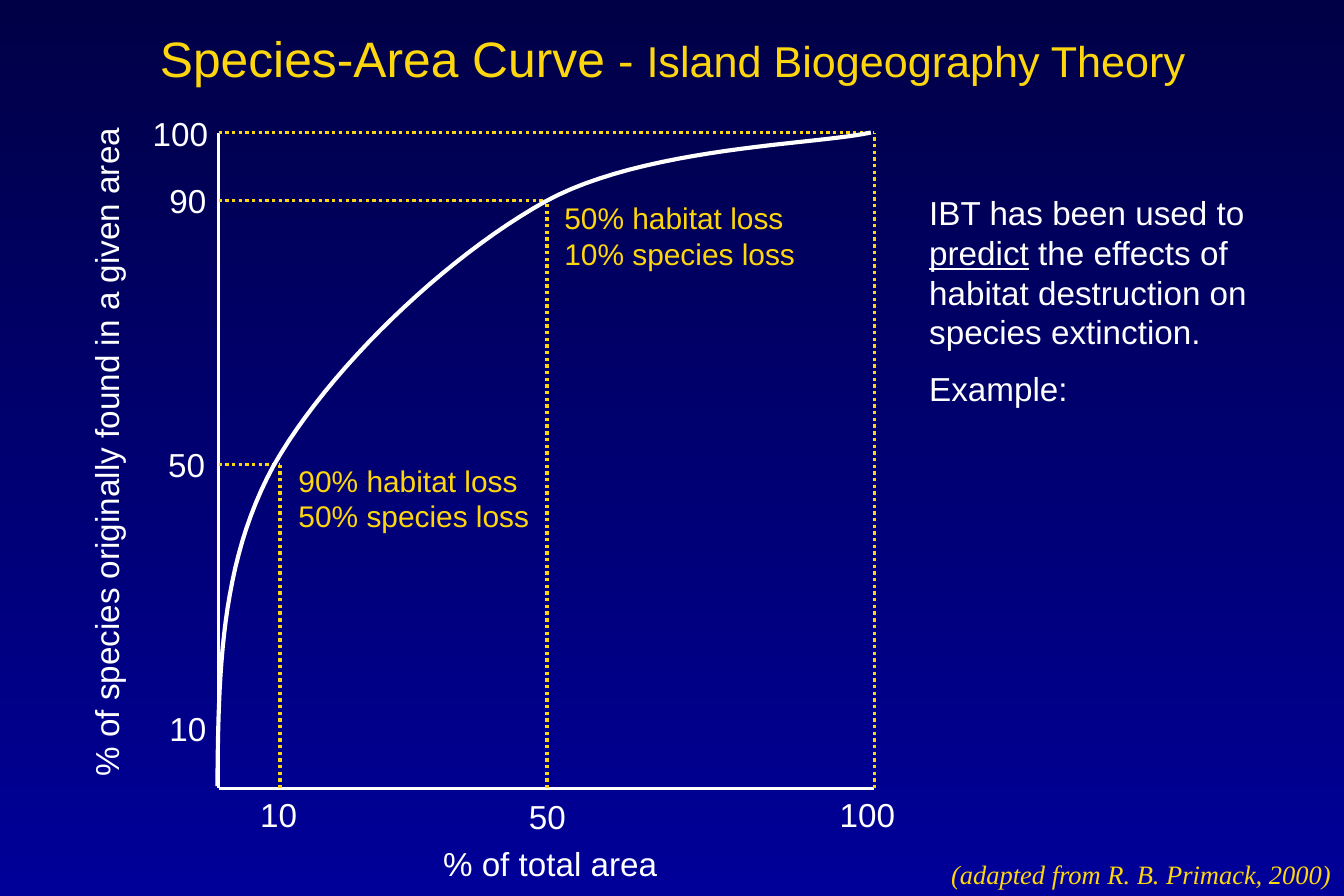
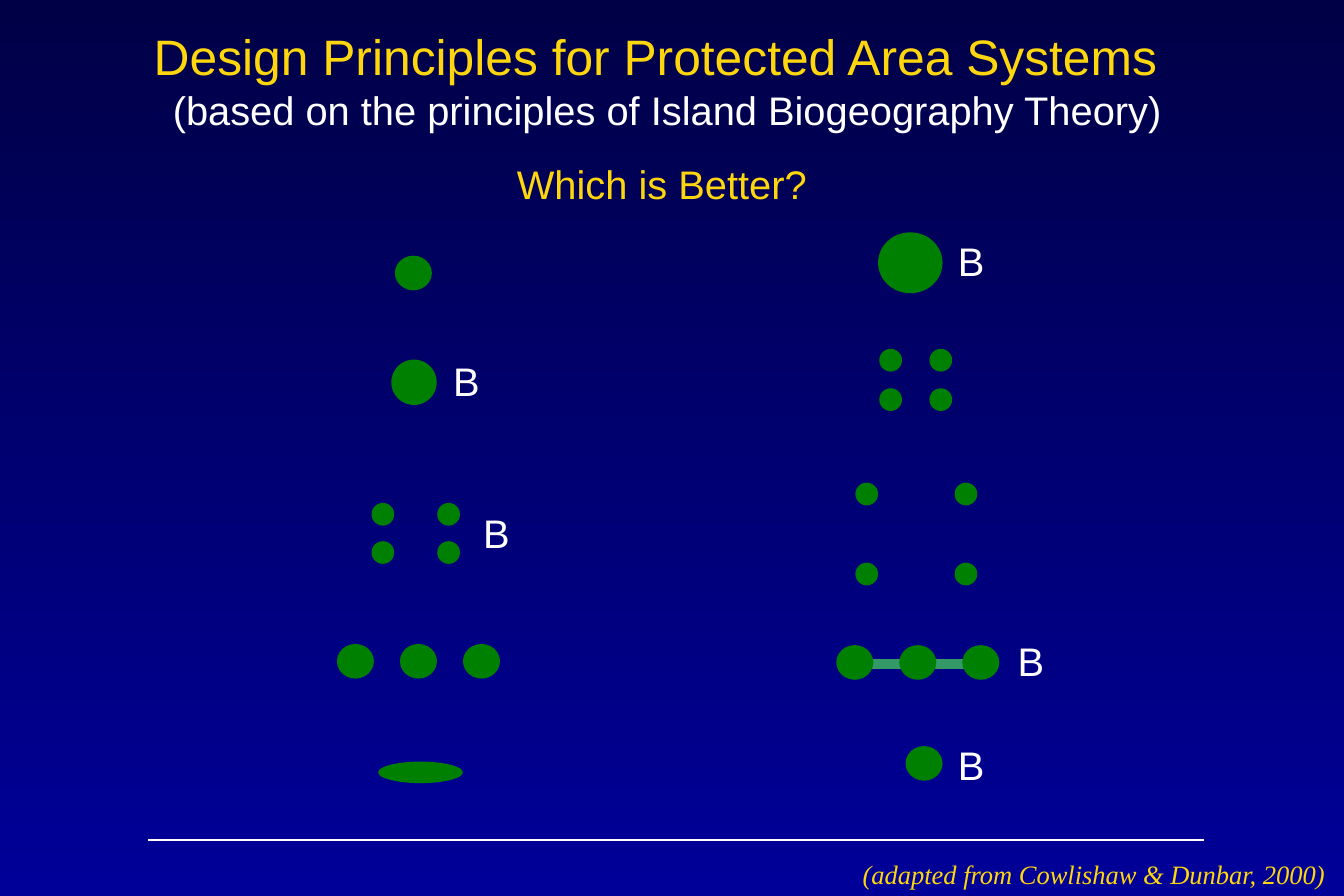
from dataclasses import dataclass
from itertools import product

from lxml import etree
from pptx import Presentation
from pptx import util as u
from pptx.dml.color import RGBColor
from pptx.enum import dml, shapes, text
from pptx.oxml.ns import qn


@dataclass(frozen=True)
class Theme:
    # Colours
    sky_top: str = "000047"
    sky_bottom: str = "000099"
    white: str = "FFFFFF"
    gold: str = "FED60E"
    island: str = "008000"
    corridor: str = "339966"
    # Fonts and type sizes
    sans: str = "Arial"
    serif: str = "Times New Roman"
    title: int = 30
    dash: int = 28
    topic: int = 26
    heading: int = 24
    body: int = 20
    note: int = 18
    source: int = 16


THEME = Theme()
COLUMNS = 45
CENTER, RIGHT = text.PP_ALIGN.CENTER, text.PP_ALIGN.RIGHT


class Deck:
    """Holds the style and the current slide; lengths are grid columns and rows."""

    def __init__(self, theme):
        self.theme = theme
        self.prs = Presentation()
        self.prs.slide_width, self.prs.slide_height = u.Inches(11.25), u.Inches(7.5)
        self.cell = self.prs.slide_width / COLUMNS
        self.slide = None
        # Shared background, dark at the top
        fill = self.prs.slide_master.background.fill
        fill.gradient()
        fill.gradient_angle = 270
        for stop, colour in zip(fill.gradient_stops, (theme.sky_top, theme.sky_bottom)):
            stop.color.rgb = RGBColor.from_string(colour)

    def grid(self, *lengths):
        return [u.Emu(round(length * self.cell)) for length in lengths]

    def new_slide(self):
        self.slide = self.prs.slides.add_slide(self.prs.slide_layouts[6])

    def style(self, run, size, colour, font=None, italic=None, underline=None):
        run.font.name = font or self.theme.sans
        run.font.size = u.Pt(size)
        run.font.color.rgb = RGBColor.from_string(colour)
        run.font.italic, run.font.underline = italic, underline

    def text(self, box, words, size, colour, align=None, turn=0, **look):
        label = self.slide.shapes.add_textbox(*self.grid(*box))
        label.rotation = turn
        frame = label.text_frame
        frame.word_wrap = True
        frame.text = words
        for paragraph in frame.paragraphs:
            paragraph.alignment = align
            for run in paragraph.runs:
                self.style(run, size, colour, **look)
        return frame

    def extend(self, paragraph, words, size, colour, **look):
        run = paragraph.add_run()
        run.text = words
        self.style(run, size, colour, **look)

    def indent(self, paragraph, length):
        paragraph._p.get_or_add_pPr().set("marL", str(self.grid(length)[0]))

    def title(self, box, words, align=None):
        return self.text(box, words, self.theme.title, self.theme.gold, align)

    def source(self, words, right):
        width = 16.5
        self.text((right - width, 28.52, width, 1.48), words, self.theme.source,
                  self.theme.gold, RIGHT, font=self.theme.serif, italic=True)

    def line(self, start, end, colour, width=2.0, dotted=False):
        rule = self.slide.shapes.add_connector(
            shapes.MSO_CONNECTOR.STRAIGHT, *self.grid(*start, *end))
        rule.line.color.rgb = RGBColor.from_string(colour)
        rule.line.width = u.Pt(width)
        if dotted:
            rule.line.dash_style = dml.MSO_LINE.ROUND_DOT
        etree.SubElement(rule._element.spPr, qn("a:effectLst"))

    def curve(self, start, bends, colour, width, steps=24):
        """Draws joined cubic bends, each given as two handles and an end."""
        points, here = [], start
        for first, second, end in bends:
            for step in range(1, steps + 1):
                t = step / steps
                weights = (1 - t) ** 3, 3 * t * (1 - t) ** 2, 3 * t * t * (1 - t), t ** 3
                knots = here, first, second, end
                points.append(self.grid(*(sum(w * knot[axis] for w, knot in zip(weights, knots))
                                          for axis in (0, 1))))
            here = end
        builder = self.slide.shapes.build_freeform(*self.grid(*start))
        builder.add_line_segments(points, close=False)
        outline = builder.convert_to_shape()
        outline.shadow.inherit = False
        outline.fill.background()
        outline.line.color.rgb = RGBColor.from_string(colour)
        outline.line.width = u.Pt(width)

    def islands(self, centres, size):
        """Draws one island per centre, grouped when there are several."""
        centres = list(centres)
        home = self.slide.shapes
        if len(centres) > 1:
            home = home.add_group_shape().shapes
        width, height = size
        for x, y in centres:
            island = home.add_shape(shapes.MSO_SHAPE.OVAL, *self.grid(
                x - width / 2, y - height / 2, width, height))
            island.shadow.inherit = False
            island.fill.solid()
            island.fill.fore_color.rgb = RGBColor.from_string(self.theme.island)
            island.line.fill.background()


def species_area_curve(deck):
    style = deck.theme
    deck.new_slide()
    left, base, top, right = 7.32, 26.4, 4.44, 29.28

    # Axes
    deck.line((left, top), (left, base), style.white)
    deck.line((left, base), (right, base), style.white)

    # Dotted readings from both axes to the curve
    for x, y in ((9.38, 15.56), (18.32, 6.72), (right, top)):
        deck.line((left, y), (x, y), style.gold, dotted=True)
        deck.line((x, base), (x, y), style.gold, dotted=True)

    # Axis values
    for value, x, y in (("10", 8.32, 26.4), ("50", 17.32, 26.48), ("100", 27.72, 26.4),
                        ("10", 5.28, 23.52), ("50", 5.24, 14.68), ("90", 5.28, 5.84),
                        ("100", 4.72, 3.6)):
        deck.text((x, y, 2.8, 1.72), value, style.body, style.white)

    # Axis names
    area = deck.text((12.28, 28.04, 13.84, 1.72), "% of total area", style.body, style.white)
    deck.indent(area.paragraphs[0], 2.16)
    deck.text((-8.08, 13.92, 23.24, 1.72), "% of species originally found in a given area",
              style.body, style.white, turn=270)

    # Losses read from the curve
    for x, y, losses in ((9.6, 15.28, "90% habitat loss\n50% species loss"),
                         (18.5, 6.48, "50% habitat loss\n10% species loss")):
        deck.text((x, y, 9.68, 2.8), losses, style.note, style.gold)

    # Curve
    deck.curve((7.28, 26.32), (
        ((7.32, 22.6), (7.36, 18.88), (9.16, 15.6)),
        ((11, 12.36), (14.88, 8.64), (18.24, 6.76)),
        ((21.56, 4.92), (27.36, 4.84), (29.16, 4.44))), style.white, 2.5)

    # Title, explanation and source
    heading = deck.title((4.96, 0.72, 36.12, 2.4), "Species-Area Curve").paragraphs[0]
    deck.extend(heading, " - ", style.dash, style.gold)
    deck.extend(heading, "Island Biogeography Theory", style.topic, style.gold)

    theory = deck.text((30.72, 6.24, 13.72, 9.72), "IBT has been used to \nExample:",
                       style.body, style.white)
    use, example = theory.paragraphs
    deck.extend(use, "predict", style.body, style.white, underline=True)
    deck.extend(use, " the effects of habitat destruction on species extinction.",
                style.body, style.white)
    example.space_before = u.Pt(style.body / 2)
    deck.source("(adapted from R. B. Primack, 2000)", 44.96)


def design_principles(deck):
    style = deck.theme
    deck.new_slide()

    # Title, question and source
    heading = deck.title((3.96, 0.68, 36, 4),
                         "Design Principles for Protected Area Systems", CENTER)
    basis = heading.add_paragraph()
    basis.alignment = CENTER
    deck.indent(basis, 0.76)
    deck.extend(basis, "(based on the principles of Island Biogeography Theory)",
                style.heading, style.white)
    deck.text((3.76, 5.16, 36.8, 2.04), "Which is Better?", style.heading, style.gold, CENTER)
    deck.source("(adapted from Cowlishaw & Dunbar, 2000)", 44.76)
    deck.line((4.96, 28.12), (40.32, 28.12), style.white, 1)

    small, medium = (0.76, 0.76), (1.24, 1.16)

    # Small or large
    deck.islands([(13.84, 9.14)], medium)
    deck.islands([(30.48, 8.8)], (2.16, 2.04))

    # Whole or split
    deck.islands([(13.86, 12.8)], (1.52, 1.52))
    deck.islands(product((29.82, 31.5), (12.06, 13.38)), small)

    # Close or far apart
    deck.islands(product((12.82, 15.02), (17.22, 18.5)), small)
    deck.islands(product((29.02, 32.34), (16.54, 19.22)), small)

    # Separate or joined by a corridor
    deck.line((28.76, 22.24), (32.76, 22.24), style.corridor, 6.25)
    for first, y in ((11.9, 22.14), (28.62, 22.18)):
        deck.islands([(first + 2.11 * step, y) for step in range(3)], medium)

    # Long or round
    deck.islands([(14.08, 25.86)], (2.84, 0.72))
    deck.islands([(30.94, 25.56)], medium)

    # Mark beside each better design
    for x, y in ((31.68, 7.72), (14.78, 11.76), (15.78, 16.82), (33.68, 21.12), (31.68, 24.6)):
        deck.text((x, y, 1.96, 2.04), "B", style.heading, style.white)


def main():
    deck = Deck(THEME)
    species_area_curve(deck)
    design_principles(deck)
    deck.prs.save("out.pptx")


if __name__ == "__main__":
    main()
